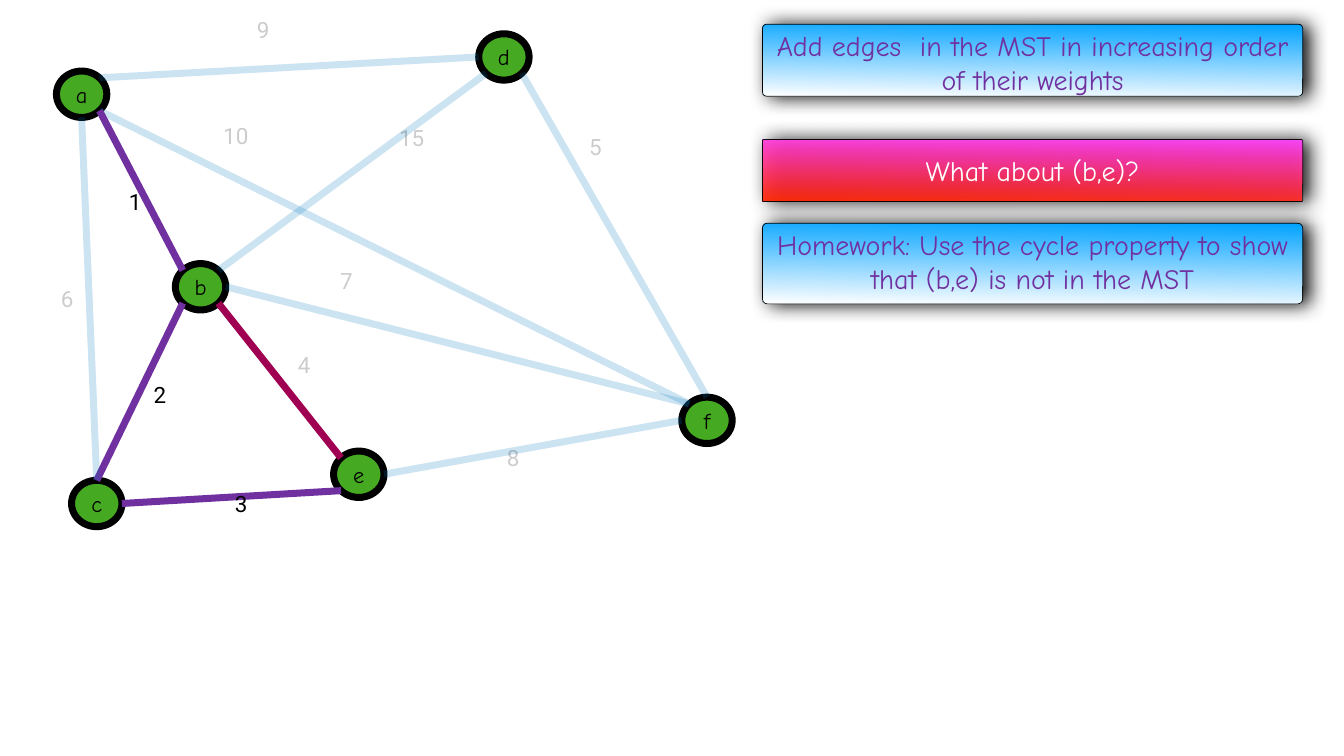
from math import sqrt

from lxml import etree
from pptx import Presentation
from pptx.dml.color import RGBColor
from pptx.enum.shapes import MSO_CONNECTOR, MSO_SHAPE
from pptx.enum.text import MSO_ANCHOR, MSO_AUTO_SIZE, PP_ALIGN
from pptx.oxml.ns import qn
from pptx.util import Inches, Pt

OVAL, ROUNDED = MSO_SHAPE.OVAL, MSO_SHAPE.ROUNDED_RECTANGLE
STRAIGHT = MSO_CONNECTOR.STRAIGHT
TOP, MIDDLE = MSO_ANCHOR.TOP, MSO_ANCHOR.MIDDLE
LEFT, CENTER = PP_ALIGN.LEFT, PP_ALIGN.CENTER
GROW, FIXED = MSO_AUTO_SIZE.SHAPE_TO_FIT_TEXT, MSO_AUTO_SIZE.NONE

BLACK, WHITE, GREEN = "000000", "FFFFFF", "45AA21"
PURPLE, CRIMSON, BLUE = "7030A0", "A00051", "0079BF"
FADED = 20
NODE_W, NODE_H = 1, 0.92
LABEL_H = 1.23

D = 1 / sqrt(2)
SITES = {"n": (0, -1), "s": (0, 1), "w": (-1, 0), "e": (1, 0),
         "nw": (-D, -D), "ne": (D, -D), "sw": (-D, D), "se": (D, D)}

NODES = {"a": (1.12, 1.41), "d": (9.5, 0.67), "b": (3.48, 5.23),
         "c": (1.42, 9.53), "e": (6.62, 8.95), "f": (13.53, 7.88)}
EDGES = [
    ("d", "se", "f", "n", BLUE), ("f", "nw", "a", "se", BLUE),
    ("d", "sw", "b", "ne", BLUE), ("c", "n", "b", "sw", PURPLE),
    ("e", "nw", "b", "se", CRIMSON), ("f", "w", "e", "e", BLUE),
    ("b", "nw", "a", "se", PURPLE), ("d", "w", "a", "ne", BLUE),
    ("c", "n", "a", "s", BLUE), ("c", "e", "e", "sw", PURPLE),
    ("f", "nw", "b", "e", BLUE),
]
WEIGHTS = {"9": (5.04, 0), "6": (1.15, 5.35), "10": (4.37, 2.1),
           "5": (11.63, 2.32), "1": (2.5, 3.41), "4": (5.85, 6.66),
           "2": (2.99, 7.24), "7": (6.69, 4.99), "8": (10, 8.5),
           "15": (7.86, 2.15), "3": (4.6, 9.41)}
TREE_WEIGHTS = {"1", "2", "3"}


def rgb(value):
    return RGBColor.from_string(value)


def set_alpha(element, percent):
    for color in element.iter(qn("a:srgbClr")):
        etree.SubElement(color, qn("a:alpha"), val=str(percent * 1000))


def set_text(s, text, font, size, color, align=CENTER, anchor=MIDDLE, fit=GROW):
    tf = s.text_frame
    frame = {"word_wrap": True, "auto_size": fit, "vertical_anchor": anchor}
    frame.update({f"margin_{side}": Inches(0.06)
                  for side in ("left", "right", "top", "bottom")})
    for name, value in frame.items():
        setattr(tf, name, value)
    p = tf.paragraphs[0]
    p.alignment = align
    r = p.add_run()
    r.text = text
    r.font.name, r.font.size = font, Pt(size)
    r.font.color.rgb = rgb(color)
    return p


def set_line(s, color, width):
    s.line.color.rgb = rgb(color)
    s.line.width = Pt(width)


def add_node(slide, name, left, top):
    s = slide.shapes.add_shape(OVAL, Inches(left), Inches(top),
                               Inches(NODE_W), Inches(NODE_H))
    s.shadow.inherit = False
    s.fill.solid()
    s.fill.fore_color.rgb = rgb(GREEN)
    set_line(s, BLACK, 10)
    set_text(s, name, "Comic Neue", 32, BLACK)


def node_site(name, site):
    left, top = NODES[name]
    dx, dy = SITES[site]
    return (Inches(left + NODE_W / 2 * (1 + dx)),
            Inches(top + NODE_H / 2 * (1 + dy)))


def add_edge(slide, start, start_site, end, end_site, color):
    s = slide.shapes.add_connector(STRAIGHT, *node_site(start, start_site),
                                   *node_site(end, end_site))
    set_line(s, color, 10)
    if color == BLUE:
        set_alpha(s.element.spPr, FADED)
    etree.SubElement(s.element.spPr, qn("a:effectLst"))


def add_weight(slide, text, left, top):
    width = 0.38 + 0.16 * len(text)
    s = slide.shapes.add_textbox(Inches(left), Inches(top),
                                 Inches(width), Inches(LABEL_H))
    p = set_text(s, text, "Roboto", 32, BLACK, LEFT)
    p.line_spacing, p.space_before = 0.9, Pt(45)
    if text not in TREE_WEIGHTS:
        set_alpha(p.runs[0].font.fill._xPr, FADED)


def add_graph(slide):
    for name, place in NODES.items():
        add_node(slide, name, *place)
    for edge in EDGES:
        add_edge(slide, *edge)
    for text, place in WEIGHTS.items():
        add_weight(slide, text, *place)


def add_shadow(s):
    s.shadow.inherit = False
    effects = s.element.spPr.find(qn("a:effectLst"))
    shadow = etree.SubElement(effects, qn("a:outerShdw"), blurRad=str(Pt(28)),
                              dist=str(Pt(9)), dir="0", rotWithShape="0")
    color = etree.SubElement(shadow, qn("a:srgbClr"), val=BLACK)
    etree.SubElement(color, qn("a:alpha"), val="97000")


def add_panel(slide, top, height, text, color=PURPLE, stops=("00A2FF", WHITE),
              anchor=TOP, corner=0.059, alpha=None):
    s = slide.shapes.add_shape(ROUNDED, Inches(15.13), Inches(top),
                               Inches(10.72), Inches(height))
    s.adjustments[0] = corner
    s.fill.gradient()
    s.fill.gradient_angle = 269
    for stop, value in zip(s.fill.gradient_stops, stops):
        stop.color.rgb = rgb(value)
    set_line(s, BLACK, 1)
    if alpha:
        set_alpha(s.element.spPr, alpha)
    add_shadow(s)
    set_text(s, text, "Comic Neue", 40, color, anchor=anchor, fit=FIXED)


def main():
    prs = Presentation()
    prs.slide_width, prs.slide_height = Inches(26.67), Inches(15)
    slide = prs.slides.add_slide(prs.slide_layouts[6])
    add_graph(slide)
    add_panel(slide, 0.48, 1.43,
              "Add edges  in the MST in increasing order of their weights")
    add_panel(slide, 2.77, 1.23, "What about (b,e)?", WHITE,
              ("FF40FF", "FF2600"), MIDDLE, 0.017, 93)
    add_panel(slide, 4.43, 1.6, "Homework: Use the cycle property to show "
              "that (b,e) is not in the MST")
    prs.save("out.pptx")


if __name__ == "__main__":
    main()
